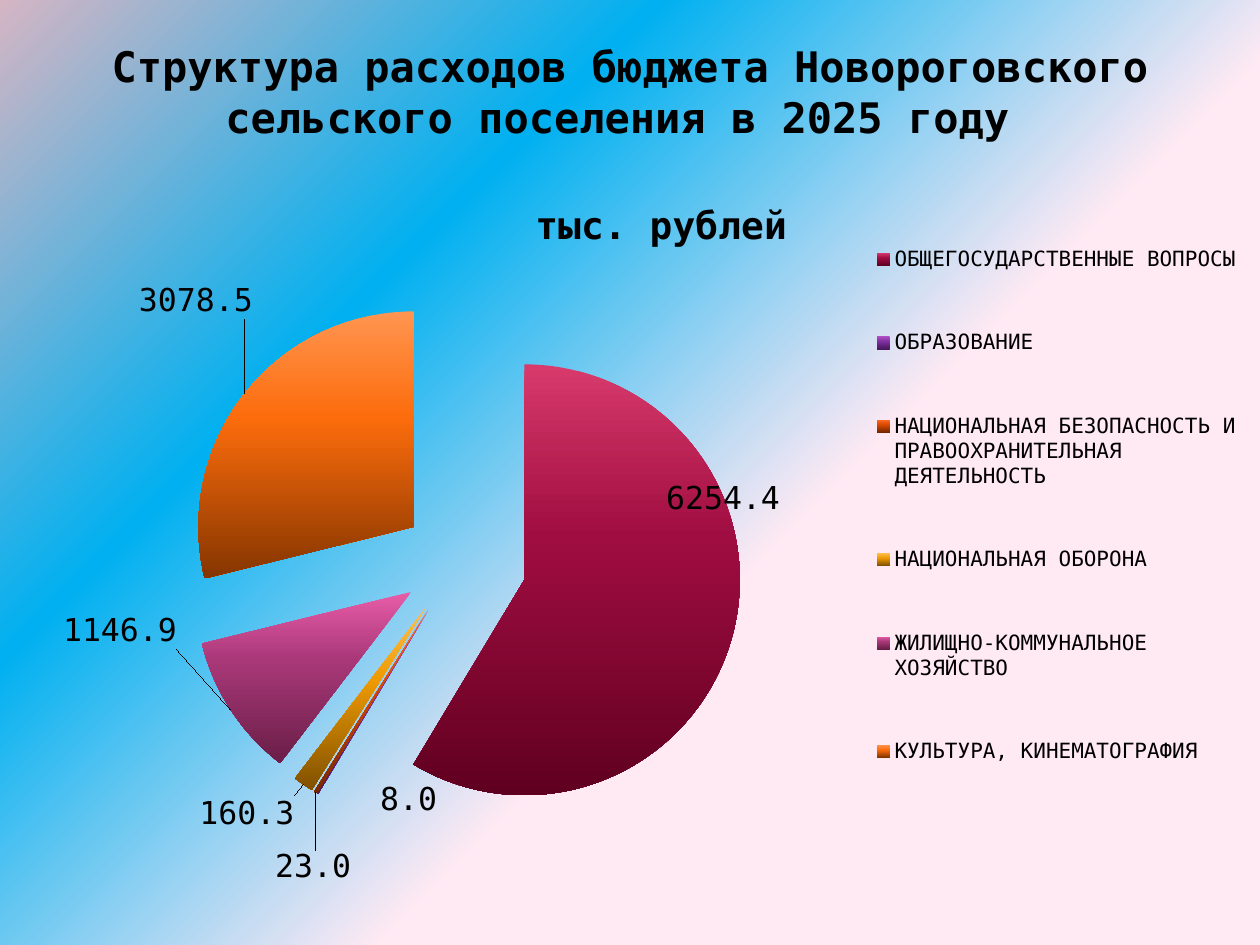
from lxml.etree import fromstring
from pptx import Presentation
from pptx.chart.data import CategoryChartData
from pptx.dml.color import RGBColor
from pptx.enum.chart import XL_CHART_TYPE, XL_LABEL_POSITION, XL_LEGEND_POSITION
from pptx.enum.text import MSO_ANCHOR, PP_ALIGN
from pptx.oxml.ns import nsdecls, qn
from pptx.util import Inches, Pt

# Content
TITLE = "Структура расходов бюджета Новороговского сельского поселения в 2025 году "
UNIT = "тыс. рублей"
# category, value, gradient from top to bottom, explosion %, label shift %
SPENDING = [
    ("ОБЩЕГОСУДАРСТВЕННЫЕ ВОПРОСЫ", 6254.4,
     ("D83A6C", "A00D40", "600020"), 32, (-6.1, -22.1)),
    ("ОБРАЗОВАНИЕ", 8,
     ("B050C8", "8030A0", "4A1860"), 26, (10.3, -2.6)),
    ("НАЦИОНАЛЬНАЯ БЕЗОПАСНОСТЬ И ПРАВООХРАНИТЕЛЬНАЯ ДЕЯТЕЛЬНОСТЬ", 23,
     ("FF6A28", "D84A00", "752800"), 26, (3.3, 7.2)),
    ("НАЦИОНАЛЬНАЯ ОБОРОНА", 160.3,
     ("FFC050", "EE9A00", "805000"), 26, (-0.4, 0.7)),
    ("ЖИЛИЩНО-КОММУНАЛЬНОЕ ХОЗЯЙСТВО", 1146.9,
     ("E85CA8", "A83878", "6A1E48"), 26, (-4, -14.1)),
    ("КУЛЬТУРА, КИНЕМАТОГРАФИЯ", 3078.5,
     ("FF9550", "FC6C0C", "853500"), 26, (1.2, -9.7)),
]
THEME = {
    "font": "DejaVu Sans Mono",
    "text": RGBColor(0, 0, 0),
    "title": Pt(24), "unit": Pt(21.6), "label": Pt(18), "legend": Pt(12),
    "background": ((40, "FFE9F3"), (70, "00B0F0"), (100, "D5B5C4")),
    "slice_stops": (0, 40, 100),
}


def set_font(font, size, bold=False):
    values = {"name": THEME["font"], "size": THEME[size], "bold": bold}
    for name, value in values.items():
        setattr(font, name, value)
    font.color.rgb = THEME["text"]


def gradient(stops, direction):
    marks = "".join(f'<a:gs pos="{pos * 1000}"><a:srgbClr val="{color}"/></a:gs>'
                    for pos, color in stops)
    return fromstring(f'<a:gradFill {nsdecls("a")} rotWithShape="1">'
                      f'<a:gsLst>{marks}</a:gsLst>{direction}</a:gradFill>')


def place(element, index, edge=True, **box):
    """Give a chart part a manual layout in percent of the chart."""
    for old in element.findall(qn("c:layout")):
        element.remove(old)
    modes = '<c:xMode val="edge"/><c:yMode val="edge"/>' if edge else ""
    sizes = "".join(f'<c:{key} val="{value / 100:.3f}"/>'
                    for key, value in box.items())
    element.insert(index, fromstring(
        f'<c:layout {nsdecls("c")}><c:manualLayout>{modes}{sizes}'
        '</c:manualLayout></c:layout>'))


prs = Presentation()
prs.slide_width, prs.slide_height = Inches(10), Inches(7.5)
s = prs.slides.add_slide(prs.slide_layouts[5])

# Background: gradient spreading from the bottom right corner
s.background.fill.solid()
bg_pr = s.background._cSld.find(qn("p:bg")).find(qn("p:bgPr"))
bg_pr.replace(bg_pr[0], gradient(
    THEME["background"],
    '<a:path path="circle"><a:fillToRect l="100000" t="100000"/></a:path>'))

# Title
title = s.shapes.title
title.left, title.top, title.width, title.height = map(Inches, (0.5, 0.3, 9, 1.25))
tf = title.text_frame
tf.word_wrap = True
tf.vertical_anchor = MSO_ANCHOR.MIDDLE
tf.margin_bottom = Inches(0.45)
p = tf.paragraphs[0]
p.alignment = PP_ALIGN.CENTER
r = p.add_run()
r.text = TITLE
set_font(r.font, "title", bold=True)

# Pie chart
data = CategoryChartData(number_format="0.0")
data.categories = [row[0] for row in SPENDING]
data.add_series(UNIT, [row[1] for row in SPENDING])
chart = s.shapes.add_chart(XL_CHART_TYPE.PIE, Inches(0.5), Inches(1.33),
                           Inches(9.5), Inches(5.7), data).chart
set_font(chart.font, "label")
chart._chartSpace.find(qn("c:chart")).addnext(fromstring(
    f'<c:spPr {nsdecls("c", "a")}><a:noFill/><a:ln><a:noFill/></a:ln></c:spPr>'))
plot = chart.plots[0]
plot.vary_by_categories = True
place(plot._element.getparent(), 0, x=15, y=24.8, w=36, h=60.1)

# Chart title
chart.has_title = True
p = chart.chart_title.text_frame.paragraphs[0]
r = p.add_run()
r.text = UNIT
set_font(r.font, "unit", bold=True)
place(chart.chart_title._element, 1, x=38.9, y=3.5)

# Legend
chart.has_legend = True
chart.legend.position = XL_LEGEND_POSITION.RIGHT
chart.legend.include_in_layout = False
set_font(chart.legend.font, "legend")
place(chart.legend._element, 1, x=66.5, y=2.9, w=33, h=88.3)

# Slices and their labels
series = plot.series[0]
labels = series.data_labels
labels.show_value = True
labels.number_format, labels.number_format_is_linked = "0.0", False
set_font(labels.font, "label")
for i, (_, _, colors, explosion, (dx, dy)) in enumerate(SPENDING):
    point = series.points[i]
    point.format.line.fill.background()
    sp_pr = series._element.findall(qn("c:dPt"))[i].find(qn("c:spPr"))
    sp_pr.insert(0, gradient(zip(THEME["slice_stops"], colors),
                             '<a:lin ang="5400000" scaled="0"/>'))
    sp_pr.addprevious(fromstring(
        f'<c:explosion {nsdecls("c")} val="{explosion}"/>'))
    label = point.data_label
    set_font(label.font, "label")
    label.position = XL_LABEL_POSITION.OUTSIDE_END
    place(labels._element.findall(qn("c:dLbl"))[i], 1, edge=False, x=dx, y=dy)

prs.save("out.pptx")
